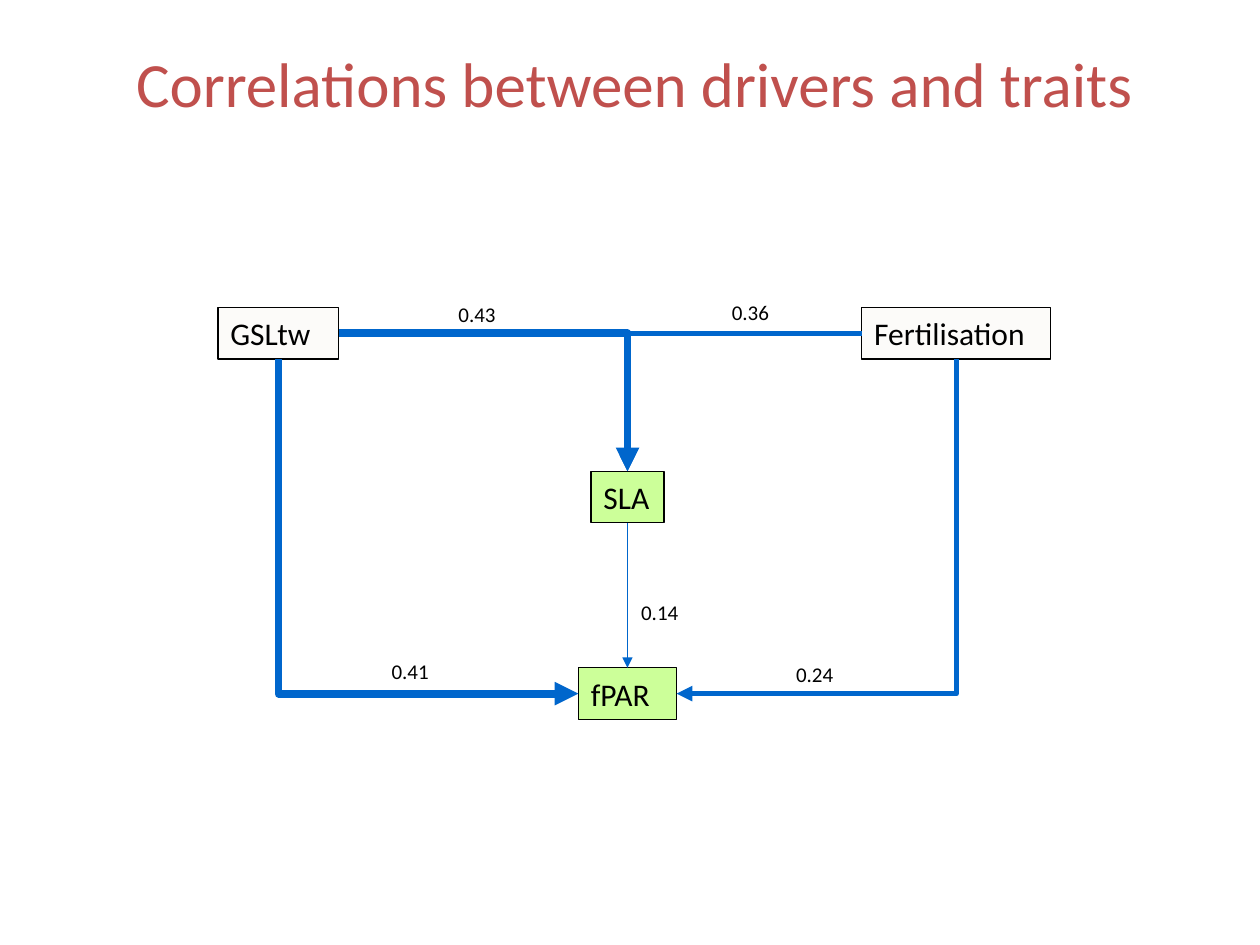
from lxml.etree import SubElement
from pptx import Presentation
from pptx.dml.color import RGBColor
from pptx.enum.shapes import MSO_CONNECTOR as Link, MSO_SHAPE as Shape
from pptx.enum.text import MSO_ANCHOR as Anchor, MSO_AUTO_SIZE as AutoSize, PP_ALIGN as Align
from pptx.oxml.ns import qn
from pptx.util import Inches, Pt

TOP, LEFT, BOTTOM, RIGHT = range(4)
DRIVER, TRAIT = "FCFBF9", "CCFF99"
NODES = {
    "GSLtw": (1.73, 2.44, 0.96, DRIVER),
    "Fertilisation": (6.84, 2.44, 1.5, DRIVER),
    "SLA": (4.69, 3.74, 0.58, TRAIT),
    "fPAR": (4.59, 5.3, 0.78, TRAIT),
}
PATHS = [
    ("SLA", BOTTOM, "fPAR", TOP, 0.75, "0.14", 4.99, 4.71),
    ("Fertilisation", BOTTOM, "fPAR", RIGHT, 3, "0.24", 6.22, 5.2),
    ("GSLtw", BOTTOM, "fPAR", LEFT, 4.5, "0.41", 3.01, 5.18),
    ("GSLtw", RIGHT, "SLA", TOP, 4.5, "0.43", 3.54, 2.34),
    ("Fertilisation", LEFT, "SLA", TOP, 3, "0.36", 5.71, 2.33),
]


def color(hex_code):
    """Return the colour for a hex string."""
    return RGBColor.from_string(hex_code)


def style_text(frame, text, size, ink="000000", align=Align.LEFT):
    """Write one paragraph in Calibri."""
    frame.text = text
    paragraph = frame.paragraphs[0]
    paragraph.alignment = align
    paragraph.font.name = "Calibri"
    paragraph.font.size = Pt(size)
    paragraph.font.color.rgb = color(ink)


def place_title(slide, left, top, width, height):
    """Place and format the title placeholder."""
    title = slide.shapes.title
    title.left, title.top = Inches(left), Inches(top)
    title.width, title.height = Inches(width), Inches(height)
    title.text_frame.vertical_anchor = Anchor.TOP
    style_text(title.text_frame, "Correlations between drivers and traits", 36,
               "C0504D", Align.CENTER)


def add_node(slide, name, left, top, width, fill):
    """Add the box of a driver or trait."""
    node = slide.shapes.add_shape(Shape.RECTANGLE, Inches(left), Inches(top),
                                  Inches(width), Inches(0.41))
    node.shadow.inherit = False
    node.fill.solid()
    node.fill.fore_color.rgb = color(fill)
    node.line.color.rgb = color("000000")
    node.line.width = Pt(0.75)
    frame = node.text_frame
    frame.word_wrap = False
    frame.auto_size = AutoSize.SHAPE_TO_FIT_TEXT
    frame.vertical_anchor = Anchor.MIDDLE
    style_text(frame, name, 18)
    return node


def bend(arrow, starts_down):
    """Give the arrow one corner, after a vertical or horizontal start."""
    properties = arrow._element.spPr
    properties.find(qn("a:prstGeom")).set("prst", "bentConnector2")
    if starts_down:
        goes_left = arrow.end_x < arrow.begin_x
        center_x = arrow.left + arrow.width // 2
        center_y = arrow.top + arrow.height // 2
        arrow.width, arrow.height = arrow.height, arrow.width
        arrow.left = center_x - arrow.width // 2
        arrow.top = center_y - arrow.height // 2
        frame = properties.find(qn("a:xfrm"))
        frame.set("rot", str((90 if goes_left else 270) * 60000))
        frame.set("flipH", "0" if goes_left else "1")


def add_path(slide, source, source_site, target, target_site, weight):
    """Add an arrow between two nodes, as thick as its correlation is strong."""
    straight = (source_site, target_site) == (BOTTOM, TOP)
    arrow = slide.shapes.add_connector(Link.STRAIGHT if straight else Link.ELBOW, 0, 0, 0, 0)
    arrow.begin_connect(source, source_site)
    arrow.end_connect(target, target_site)
    if not straight:
        bend(arrow, source_site == BOTTOM)
    arrow.line.color.rgb = color("0066CC")
    arrow.line.width = Pt(weight)
    SubElement(arrow.line._get_or_add_ln(), qn("a:tailEnd"), type="triangle")
    SubElement(arrow._element.spPr, qn("a:effectLst"))


def add_coefficient(slide, value, left, top):
    """Add the correlation value beside its arrow."""
    label = slide.shapes.add_textbox(Inches(left), Inches(top), Inches(0.53), Inches(0.31))
    label.text_frame.word_wrap = False
    label.text_frame.auto_size = AutoSize.SHAPE_TO_FIT_TEXT
    style_text(label.text_frame, value, 12)


def add_path_diagram(slide):
    """Add all nodes, arrows and coefficients."""
    nodes = {name: add_node(slide, name, *place) for name, place in NODES.items()}
    for source, source_site, target, target_site, weight, value, left, top in PATHS:
        add_path(slide, nodes[source], source_site, nodes[target], target_site, weight)
        add_coefficient(slide, value, left, top)


def main():
    """Build and save the slide."""
    deck = Presentation()
    deck.slide_width, deck.slide_height = Inches(10), Inches(7.5)
    slide = deck.slides.add_slide(deck.slide_layouts[5])
    place_title(slide, 0.3, 0.3, 9.47, 1.25)
    add_path_diagram(slide)
    deck.save("out.pptx")


if __name__ == "__main__":
    main()
